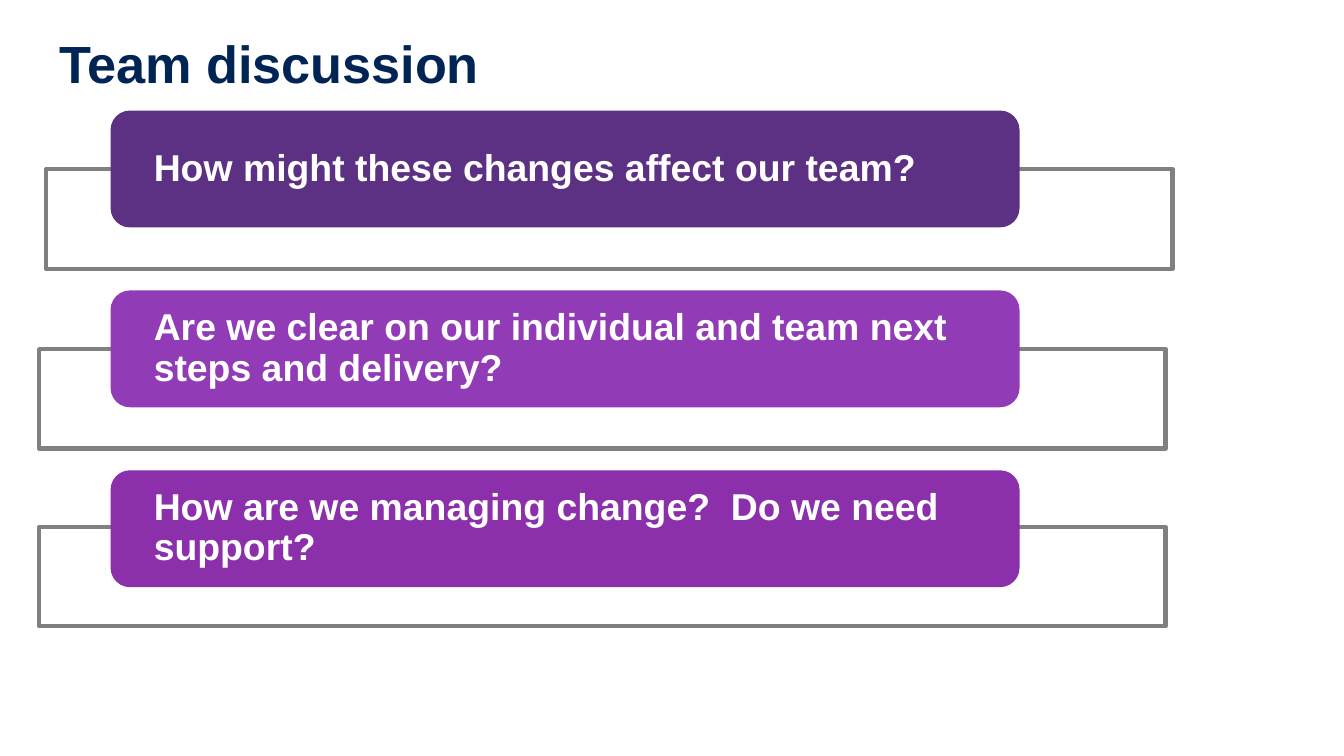
"""Builds the team discussion slide with three framed questions."""
from lxml.etree import SubElement
from pptx import Presentation
from pptx.dml.color import RGBColor
from pptx.enum.shapes import MSO_SHAPE as Shape
from pptx.enum.text import MSO_ANCHOR as Anchor, PP_ALIGN as Align
from pptx.oxml.ns import qn
from pptx.util import Cm, Pt

NAVY = RGBColor(0x00, 0x25, 0x54)
WHITE = RGBColor(0xFF, 0xFF, 0xFF)
GREY = RGBColor(0x80, 0x80, 0x80)
DARK_PURPLE = RGBColor(0x5C, 0x31, 0x83)
LIGHT_PURPLE = RGBColor(0x91, 0x3C, 0xB6)
PURPLE = RGBColor(0x8B, 0x2F, 0xAB)

QUESTIONS = [
    ("How might these changes affect our team?", DARK_PURPLE, 0.87, 3.2),
    ("Are we clear on our individual and team next steps and delivery?", LIGHT_PURPLE, 0.74, 6.6),
    ("How are we managing change?  Do we need support?", PURPLE, 0.74, 9.96),
]
FIRST_TOP = 2.09
PITCH = 3.4


class SlideBuilder:
    font = "Arial"

    def __init__(self, slide):
        self.slide = slide

    def set_text(self, shape, text, size, color, margin_x, margin_y):
        frame = shape.text_frame
        frame.word_wrap = True
        frame.vertical_anchor = Anchor.MIDDLE
        frame.margin_left = frame.margin_right = Cm(margin_x)
        frame.margin_top = frame.margin_bottom = Cm(margin_y)
        paragraph = frame.paragraphs[0]
        paragraph.text = text
        paragraph.alignment = Align.LEFT
        font = paragraph.font
        font.name, font.size, font.bold = self.font, Pt(size), True
        font.color.rgb = color
        return paragraph

    def box(self, kind, left, top, width, height, fill):
        shape = self.slide.shapes.add_shape(kind, Cm(left), Cm(top), Cm(width), Cm(height))
        shape.shadow.inherit = False
        shape.fill.solid()
        shape.fill.fore_color.rgb = fill
        return shape

    def title(self, text):
        shape = self.slide.shapes.add_textbox(Cm(0.87), Cm(0.38), Cm(23.66), Cm(1.6))
        self.set_text(shape, text, 28, NAVY, 0.25, 0.25)

    def frame(self, left, top):
        shape = self.box(Shape.RECTANGLE, left, top, 21.29, 1.88, WHITE)
        shape.line.color.rgb = GREY
        shape.line.width = Pt(2.25)
        color = shape.element.spPr.find(qn("a:solidFill"))[0]
        SubElement(color, qn("a:alpha"), val="90000")

    def question(self, text, top, fill):
        shape = self.box(Shape.ROUNDED_RECTANGLE, 2.09, top, 17.18, 2.21, fill)
        shape.line.fill.background()
        paragraph = self.set_text(shape, text, 20, WHITE, 0.71, 0)
        paragraph.line_spacing = 0.9


def main():
    presentation = Presentation()
    presentation.slide_width, presentation.slide_height = Cm(25.4), Cm(14.29)
    builder = SlideBuilder(presentation.slides.add_slide(presentation.slide_layouts[6]))
    builder.title("Team discussion")
    for index, (text, fill, frame_left, frame_top) in enumerate(QUESTIONS):
        builder.frame(frame_left, frame_top)
        builder.question(text, FIRST_TOP + index * PITCH, fill)
    presentation.save("out.pptx")


if __name__ == "__main__":
    main()
